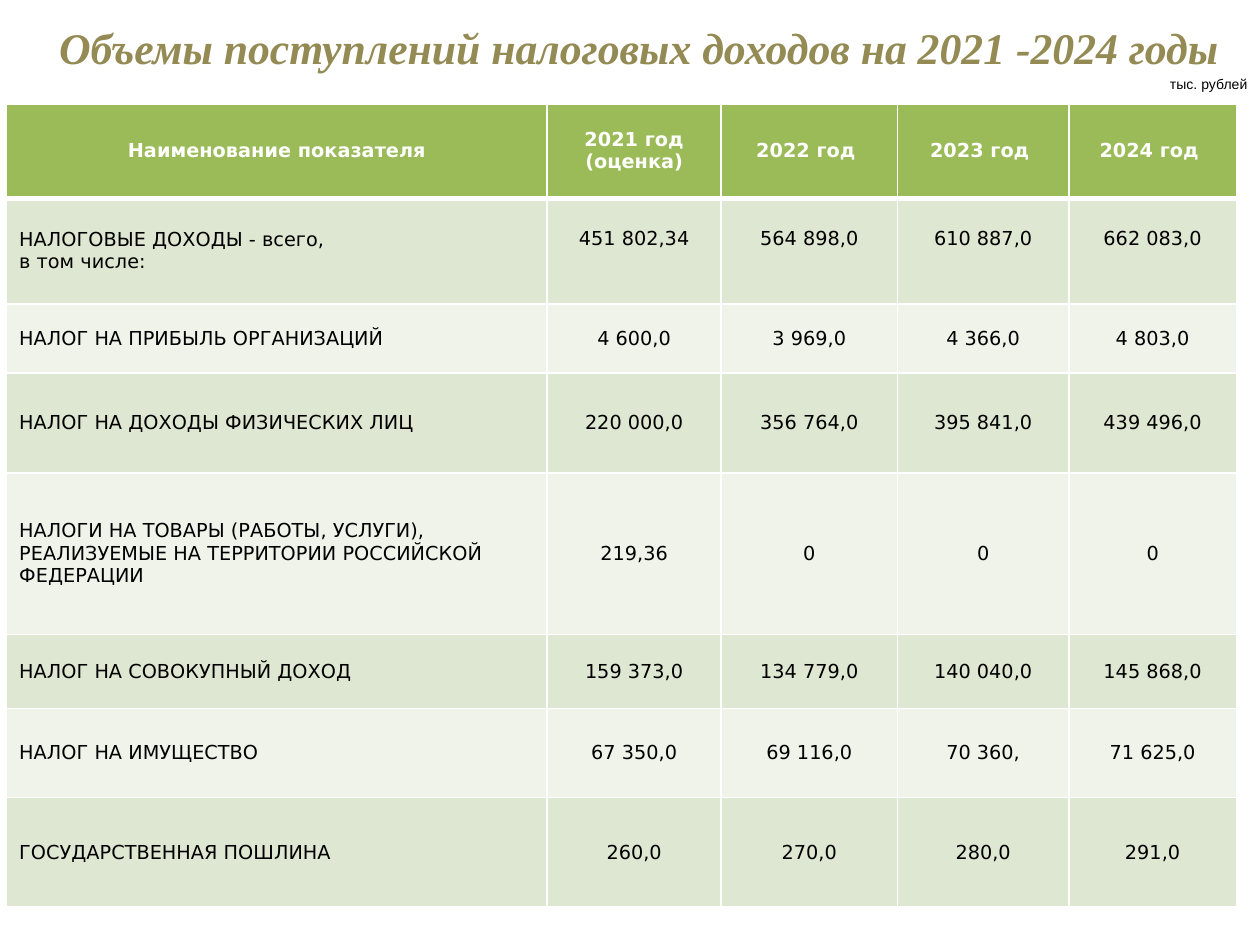
from dataclasses import dataclass

import pptx
import pptx.dml.color
import pptx.enum.text
import pptx.oxml
import pptx.oxml.ns
import pptx.presentation
import pptx.slide
import pptx.table
import pptx.text.text
import pptx.util

Pt = pptx.util.Pt
RGBColor = pptx.dml.color.RGBColor
Align = pptx.enum.text.PP_ALIGN
Anchor = pptx.enum.text.MSO_ANCHOR

WHITE = RGBColor(0xFF, 0xFF, 0xFF)
BLACK = RGBColor(0x00, 0x00, 0x00)
GREEN = RGBColor(0x9B, 0xBB, 0x59)
DARK_BAND = RGBColor(0xDE, 0xE7, 0xD1)
LIGHT_BAND = RGBColor(0xEF, 0xF3, 0xEA)
OLIVE = RGBColor(0x94, 0x8A, 0x54)

COLUMN_WIDTHS = (308.9, 99.4, 100.8, 97.9, 95.8)
THIN, THICK = 1, 3
TOTAL_ROW = 1


@dataclass(frozen=True)
class Row:
    height: float
    label: str
    values: tuple[str, ...]


ROWS = (
    Row(54, "Наименование показателя",
        ("2021 год (оценка)", "2022 год ", "2023 год ", "2024 год ")),
    Row(60.3, "НАЛОГОВЫЕ ДОХОДЫ - всего,\nв том числе:",
        ("451 802,34", "564 898,0", "610 887,0", "662 083,0")),
    Row(39.6, "НАЛОГ НА ПРИБЫЛЬ ОРГАНИЗАЦИЙ",
        ("4 600,0", "3 969,0", "4 366,0", "4 803,0")),
    Row(57, "НАЛОГ НА ДОХОДЫ ФИЗИЧЕСКИХ ЛИЦ",
        ("220 000,0", "356 764,0", "395 841,0", "439 496,0")),
    Row(92.3, "НАЛОГИ НА ТОВАРЫ (РАБОТЫ, УСЛУГИ), РЕАЛИЗУЕМЫЕ НА ТЕРРИТОРИИ "
        "РОССИЙСКОЙ ФЕДЕРАЦИИ", ("219,36", "0", "0", "0")),
    Row(42.4, "НАЛОГ НА СОВОКУПНЫЙ ДОХОД",
        ("159 373,0", "134 779,0", "140 040,0", "145 868,0")),
    Row(51, "НАЛОГ НА ИМУЩЕСТВО",
        ("67 350,0", "69 116,0", "70 360,", "71 625,0")),
    Row(62.5, "ГОСУДАРСТВЕННАЯ ПОШЛИНА",
        ("260,0", "270,0", "280,0", "291,0")),
)


def set_font(para: pptx.text.text._Paragraph, name: str, size: float,
             color: RGBColor, bold: bool = False, italic: bool = False) -> None:
    para.font.name = name
    para.font.size = Pt(size)
    para.font.color.rgb = color
    para.font.bold = bold
    para.font.italic = italic


def add_borders(cell: pptx.table._Cell, top: float, bottom: float) -> None:
    properties = cell._tc.get_or_add_tcPr()
    sides = {"lnL": THIN, "lnR": THIN, "lnT": top, "lnB": bottom}
    for side, width in sides.items():
        properties.append(pptx.oxml.parse_xml(
            f'<a:{side} {pptx.oxml.ns.nsdecls("a")} w="{Pt(width)}">'
            f'<a:solidFill><a:srgbClr val="{WHITE}"/></a:solidFill></a:{side}>'))


def fill_cell(cell: pptx.table._Cell, text: str, row: int, column: int) -> None:
    header = row == 0
    add_borders(cell, THICK if row == TOTAL_ROW else THIN, THICK if header else THIN)
    cell.fill.solid()
    cell.fill.fore_color.rgb = GREEN if header else (LIGHT_BAND, DARK_BAND)[row % 2]
    cell.vertical_anchor = Anchor.MIDDLE
    if row == TOTAL_ROW and column > 0:
        cell.margin_bottom = Pt(17)
    cell.text = text
    for para in cell.text_frame.paragraphs:
        para.alignment = Align.CENTER if header or column > 0 else Align.LEFT
        set_font(para, "DejaVu Sans", 11, WHITE if header else BLACK, bold=header)


def add_revenue_table(slide: pptx.slide.Slide) -> None:
    frame = slide.shapes.add_table(
        len(ROWS), len(COLUMN_WIDTHS), Pt(3.8), Pt(59.3),
        Pt(sum(COLUMN_WIDTHS)), Pt(sum(row.height for row in ROWS)))
    table = frame.table
    for column, width in zip(table.columns, COLUMN_WIDTHS):
        column.width = Pt(width)
    for row_index, row in enumerate(ROWS):
        table.rows[row_index].height = Pt(row.height)
        for column_index, text in enumerate((row.label, *row.values)):
            fill_cell(table.cell(row_index, column_index), text, row_index, column_index)


def add_unit_note(slide: pptx.slide.Slide) -> None:
    box = slide.shapes.add_textbox(Pt(660.2), Pt(39.6), Pt(59.8), Pt(17.3))
    box.text_frame.word_wrap = False
    para = box.text_frame.paragraphs[0]
    para.text = "тыс. рублей"
    para.alignment = Align.RIGHT
    set_font(para, "Arial", 8, BLACK)


def format_title(slide: pptx.slide.Slide) -> None:
    title = slide.shapes.title
    title.left, title.top, title.width, title.height = Pt(-65.5), Pt(-0.7), Pt(805), Pt(54.7)
    title.text_frame.auto_size = pptx.enum.text.MSO_AUTO_SIZE.NONE
    title.text_frame.vertical_anchor = Anchor.MIDDLE
    para = title.text_frame.paragraphs[0]
    para.text = "Объемы поступлений налоговых доходов на 2021 -2024 годы"
    para.alignment = Align.CENTER
    para._p.get_or_add_pPr().set("marL", str(Pt(56)))
    set_font(para, "Times New Roman", 25, OLIVE, bold=True, italic=True)


def main() -> None:
    deck = pptx.Presentation()
    deck.slide_width, deck.slide_height = Pt(720), Pt(540)
    slide = deck.slides.add_slide(deck.slide_layouts[5])
    add_revenue_table(slide)
    add_unit_note(slide)
    format_title(slide)
    deck.save("out.pptx")


if __name__ == "__main__":
    main()
